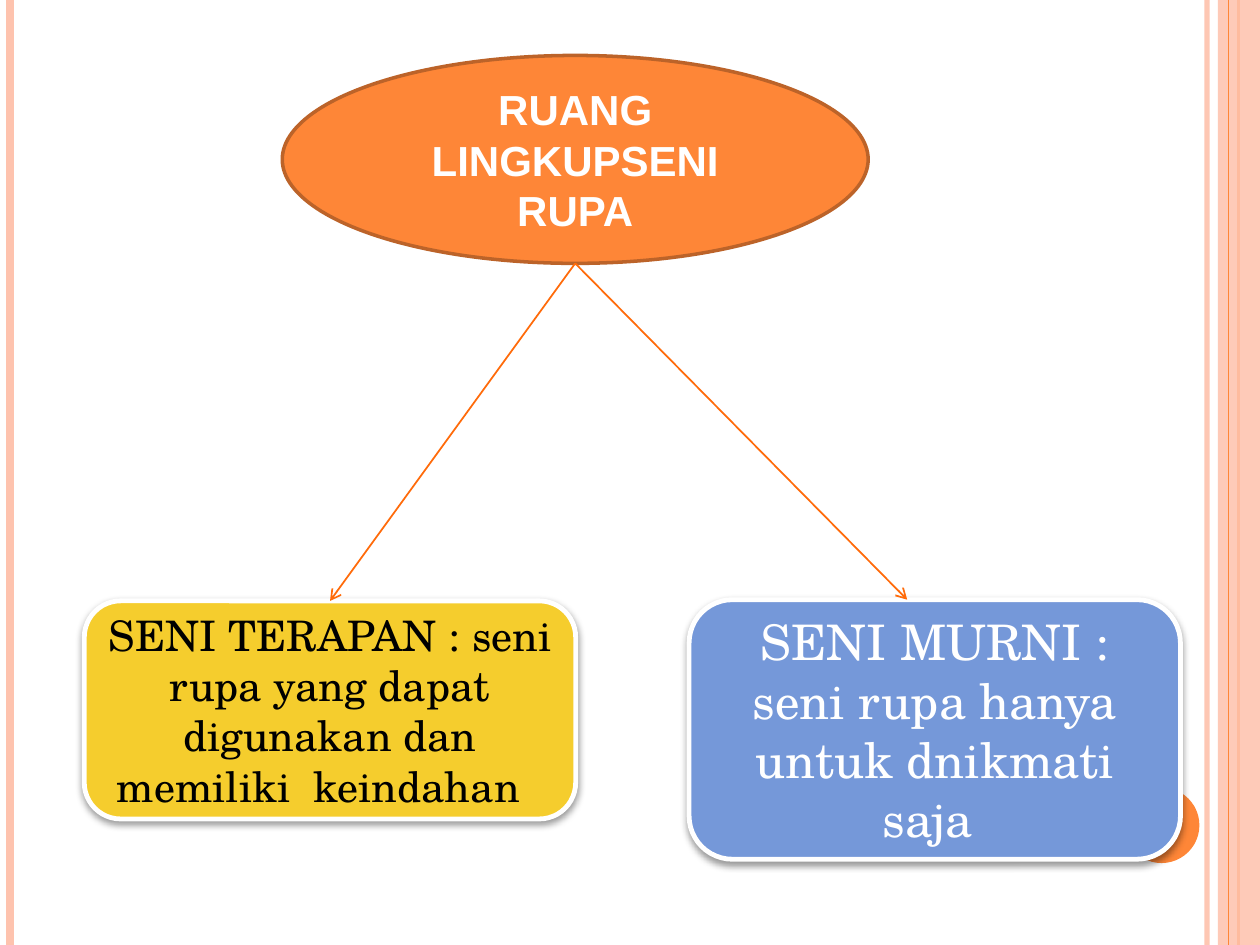
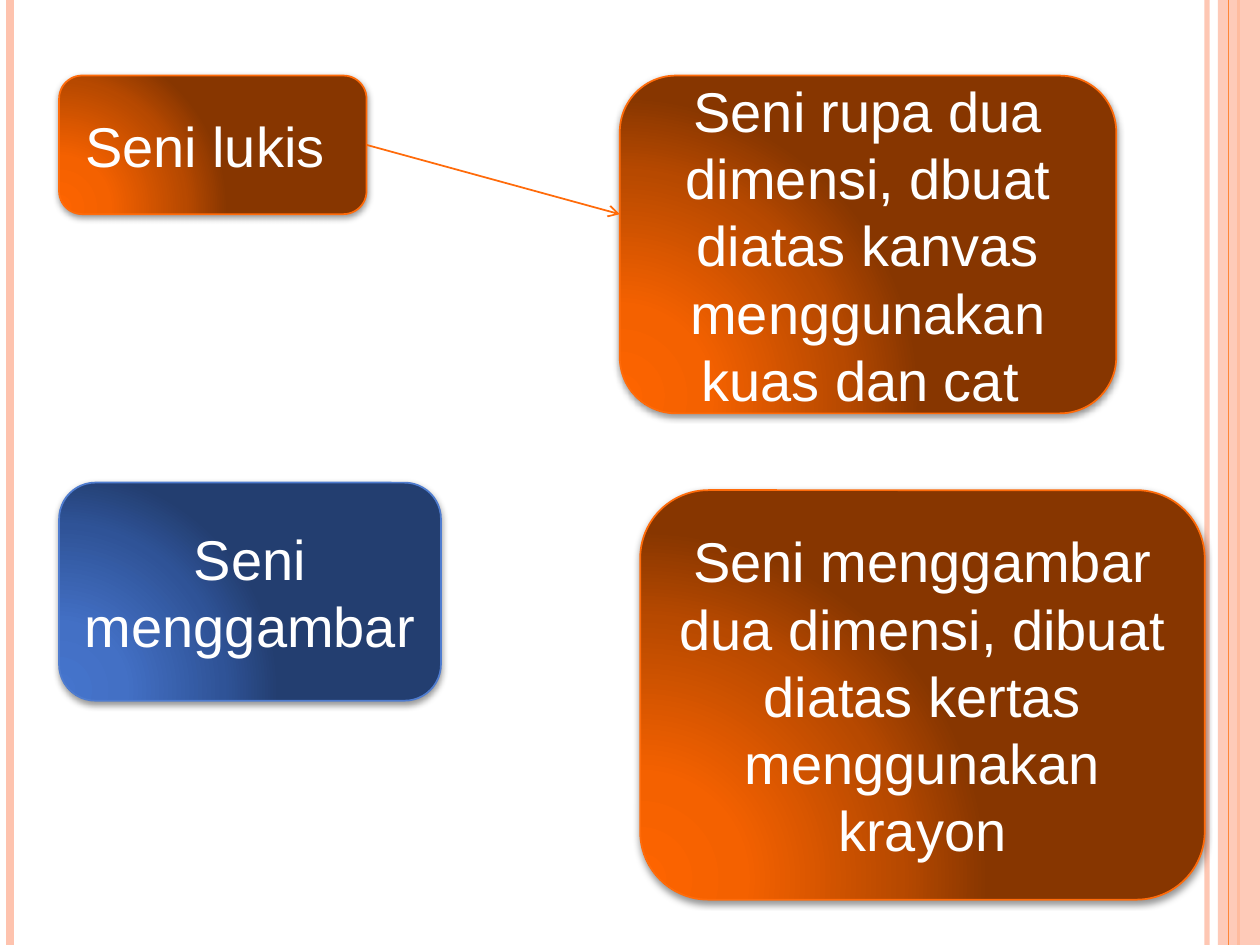
"""Build two slides on the scope of visual art."""
from dataclasses import dataclass
from typing import Any, Optional

import pptx
import pptx.dml.color
import pptx.enum.shapes
import pptx.enum.text
import pptx.oxml
import pptx.oxml.ns
import pptx.util

Pt = pptx.util.Pt
KIND = pptx.enum.shapes.MSO_SHAPE
NS = 'xmlns:a="http://schemas.openxmlformats.org/drawingml/2006/main"'
WIDE, HIGH = 720, 540
SANS, SERIF = "Arial", "TeX Gyre Schola"
HUES = {
    "white": "FFFFFF",
    "black": "000000",
    "peach": "FEC3AE",
    "orange": "FE8637",
    "rust": "BC6329",
    "yellow": "F5CD2D",
    "blue": "7598D9",
    "flame": "FF6B0A",
    "azure": "4F7CCF",
}
FADES = {
    "ember": ("FD6400", "F46100", "B74900", "873600"),
    "ocean": ("4574CC", "4370C5", "2F5397", "233E70"),
}
STOPS = (0, 30, 75, 100)


@dataclass
class Shade:
    """Drop shadow cast straight down."""
    alpha: int
    dist: float


SOFT, DEEP = Shade(40, 2), Shade(42, 1.6)


@dataclass
class Box:
    """Filled shape with an optional outline, shadow and text."""
    left: float
    top: float
    width: float
    height: float
    fill: str
    text: str = ""
    edge: str = ""
    weight: float = 1
    kind: Any = KIND.ROUNDED_RECTANGLE
    shade: Optional[Shade] = None
    size: float = 32
    font: str = SANS
    hue: str = "white"
    bold: bool = False
    alpha: int = 100


@dataclass
class Rule:
    """Vertical line over the full slide height."""
    left: float
    hue: str
    weight: float
    alpha: int = 100


BACK = (Rule(689.8, "peach", 3, 93), Rule(5.8, "peach", 4.5),
        Rule(707.8, "orange", 1.5))
BAND = Box(696, 0, 24, HIGH, "peach", kind=KIND.RECTANGLE, alpha=87)
FRONT = Rule(702, "orange", 0.75)
DOT = Box(642.2, 450, 43.2, 43.2, "orange", kind=KIND.OVAL)

SCOPE = Box(161.3, 31.7, 334.8, 118.8, "orange", "RUANG LINGKUPSENI RUPA",
            "rust", 2, KIND.OVAL, size=24, bold=True)
USED = Box(48.2, 343.4, 280.8, 124.6, "yellow",
           "SENI TERAPAN : seni rupa yang dapat digunakan dan memiliki  keindahan  ",
           "white", 2.75, shade=SOFT, size=24, font=SERIF, hue="black")
PURE = Box(393.8, 342.7, 280.8, 148.3, "blue",
           "SENI MURNI : seni rupa hanya untuk dnikmati saja ",
           "white", 2.75, shade=SOFT, size=28, font=SERIF)

PAINT = Box(33.8, 43.2, 175.7, 79.2, "ember", "Seni lukis ", "flame", shade=DEEP)
CANVAS = Box(354.2, 43.2, 283.7, 193, "ember",
             "Seni rupa dua dimensi, dbuat diatas kanvas menggunakan kuas dan cat ",
             "flame", shade=DEEP)
DRAW = Box(33.8, 275.8, 218.2, 124.6, "ocean", "Seni menggambar", "azure", shade=DEEP)
PAPER = Box(365.8, 280.1, 322.6, 234, "ember",
            "Seni menggambar dua dimensi, dibuat diatas kertas menggunakan krayon",
            "flame", shade=DEEP)


def tint(name: str) -> pptx.dml.color.RGBColor:
    """Look up a colour by name."""
    return pptx.dml.color.RGBColor.from_string(HUES[name])


def node(tag: str, attrs: str = "", inner: str = "") -> Any:
    """Make one drawing element."""
    return pptx.oxml.parse_xml(f"<a:{tag} {NS} {attrs}>{inner}</a:{tag}>")


def thin(part: Any, alpha: int) -> None:
    """Make the solid colours under an element see-through."""
    if alpha < 100:
        for clr in part.iter(pptx.oxml.ns.qn("a:srgbClr")):
            clr.append(node("alpha", f'val="{alpha * 1000}"'))


def fade(shape: Any, name: str) -> None:
    """Fill a shape with a round gradient from its lower left."""
    stops = "".join(
        f'<a:gs pos="{pos * 1000}"><a:srgbClr val="{hue}"/></a:gs>'
        for pos, hue in zip(STOPS, FADES[name]))
    aim = '<a:fillToRect l="5000" t="100000" r="120000" b="10000"/>'
    shape.fill.background()
    props = shape._element.spPr
    blank = props.find(pptx.oxml.ns.qn("a:noFill"))
    props.replace(blank, node("gradFill", 'rotWithShape="1"',
                              f'<a:gsLst>{stops}</a:gsLst><a:path path="circle">{aim}</a:path>'))


def cast(shape: Any, shade: Shade) -> None:
    """Give a shape its drop shadow."""
    clr = f'<a:srgbClr val="{HUES["black"]}"><a:alpha val="{shade.alpha * 1000}"/></a:srgbClr>'
    attrs = (f'blurRad="{Pt(4)}" dist="{Pt(shade.dist)}" dir="5400000" '
             'algn="ctr" rotWithShape="0"')
    effects = shape._element.spPr.find(pptx.oxml.ns.qn("a:effectLst"))
    effects.append(node("outerShdw", attrs, clr))


def write(shape: Any, text: str, *, size: float, font: str, hue: str, bold: bool) -> None:
    """Set centred text in a shape."""
    frame = shape.text_frame
    frame.word_wrap = True
    frame.vertical_anchor = pptx.enum.text.MSO_ANCHOR.MIDDLE
    para = frame.paragraphs[0]
    para.alignment = pptx.enum.text.PP_ALIGN.CENTER
    run = para.add_run()
    run.text = text
    run.font.size, run.font.name, run.font.bold = Pt(size), font, bold
    run.font.color.rgb = tint(hue)


def put(slide: Any, box: Box) -> Any:
    """Draw a box."""
    shape = slide.shapes.add_shape(
        box.kind, Pt(box.left), Pt(box.top), Pt(box.width), Pt(box.height))
    shape.shadow.inherit = False
    if box.fill in FADES:
        fade(shape, box.fill)
    else:
        shape.fill.solid()
        shape.fill.fore_color.rgb = tint(box.fill)
        thin(shape._element.spPr, box.alpha)
    if box.edge:
        shape.line.color.rgb = tint(box.edge)
        shape.line.width = Pt(box.weight)
    else:
        shape.line.fill.background()
    if box.shade:
        cast(shape, box.shade)
    if box.text:
        write(shape, box.text, size=box.size, font=box.font, hue=box.hue, bold=box.bold)
    return shape


def link(slide: Any, start: tuple[float, float], end: tuple[float, float],
         hue: str = "flame", weight: float = 1, alpha: int = 100) -> Any:
    """Draw a straight line."""
    line = slide.shapes.add_connector(
        pptx.enum.shapes.MSO_CONNECTOR.STRAIGHT, *map(Pt, start + end))
    line.line.color.rgb = tint(hue)
    line.line.width = Pt(weight)
    thin(line._element.spPr, alpha)
    line._element.spPr.append(node("effectLst"))
    return line


def arrow(slide: Any, start: tuple[float, float], end: tuple[float, float]) -> Any:
    """Draw a line with an open head at its end."""
    line = link(slide, start, end)
    line.line._get_or_add_ln().append(node("tailEnd", 'type="arrow"'))
    return line


def rule(slide: Any, item: Rule) -> None:
    """Draw a vertical line."""
    link(slide, (item.left, 0), (item.left, HIGH), item.hue, item.weight, item.alpha)


def page(deck: Any) -> Any:
    """Add a slide with the shared frame."""
    slide = deck.slides.add_slide(deck.slide_layouts[6])
    for item in BACK:
        rule(slide, item)
    put(slide, BAND)
    rule(slide, FRONT)
    put(slide, DOT)
    return slide


def scope(deck: Any) -> None:
    """Build the slide on the two branches."""
    slide = page(deck)
    put(slide, SCOPE)
    used = put(slide, USED)
    put(slide, PURE)
    root = (SCOPE.left + SCOPE.width / 2, SCOPE.top + SCOPE.height)
    arrow(slide, root, (USED.left + USED.width / 2, USED.top)).end_connect(used, 0)
    arrow(slide, root, (518.4, PURE.top))


def forms(deck: Any) -> None:
    """Build the slide on painting and drawing."""
    slide = page(deck)
    paint = put(slide, PAINT)
    put(slide, CANVAS)
    start = (PAINT.left + PAINT.width, PAINT.top + PAINT.height / 2)
    arrow(slide, start, (CANVAS.left, 122.4)).begin_connect(paint, 3)
    put(slide, DRAW)
    put(slide, PAPER)


def main() -> None:
    """Build and save the deck."""
    deck = pptx.Presentation()
    deck.slide_width, deck.slide_height = Pt(WIDE), Pt(HIGH)
    scope(deck)
    forms(deck)
    deck.save("out.pptx")


if __name__ == "__main__":
    main()
